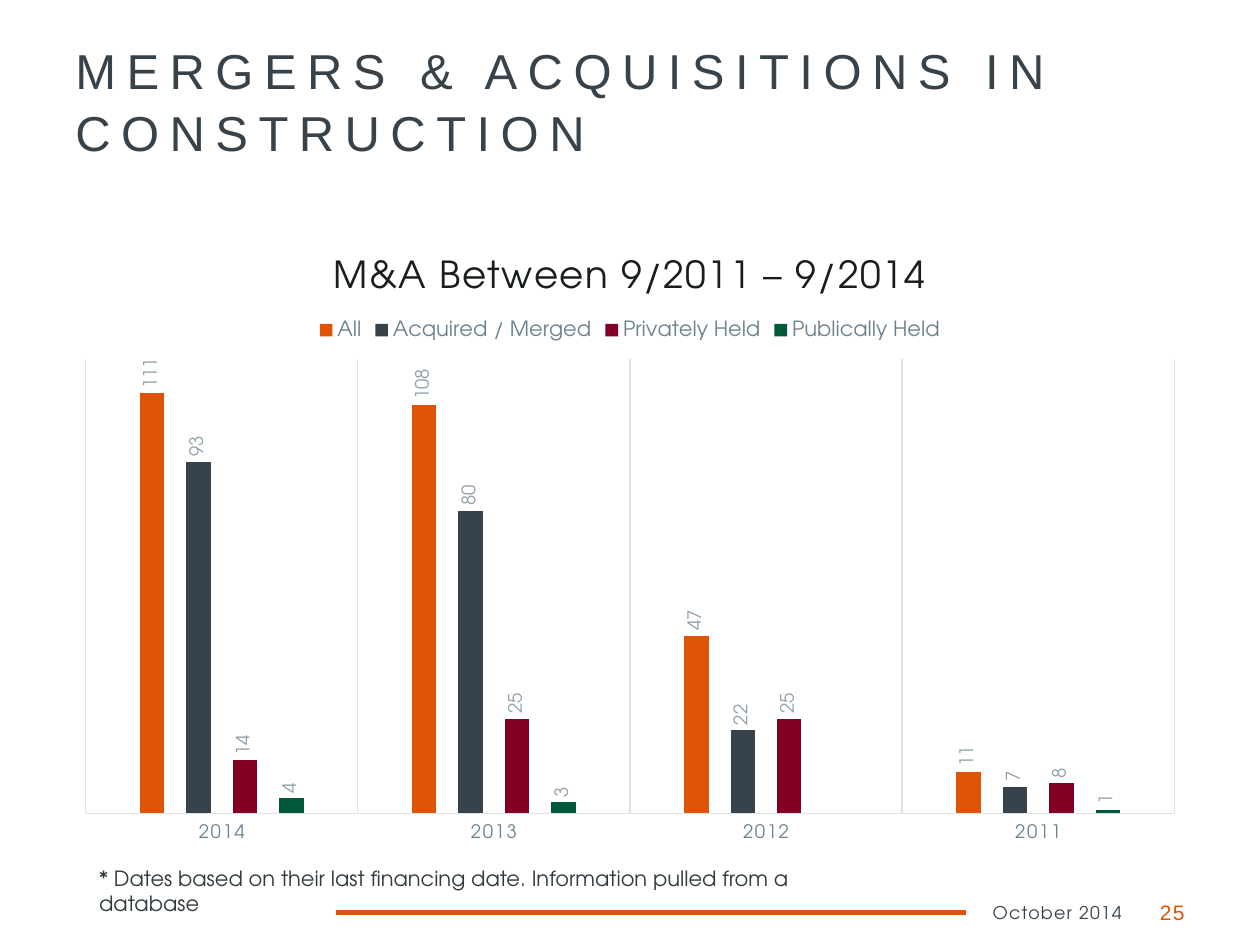
from dataclasses import dataclass
from typing import Optional

from lxml.etree import SubElement
from pptx import Presentation
from pptx.chart.data import CategoryChartData
from pptx.dml.color import RGBColor
from pptx.enum.chart import (XL_CHART_TYPE, XL_LABEL_POSITION, XL_LEGEND_POSITION,
                             XL_TICK_LABEL_POSITION, XL_TICK_MARK)
from pptx.enum.shapes import MSO_CONNECTOR
from pptx.enum.text import MSO_ANCHOR, PP_ALIGN
from pptx.oxml import parse_xml
from pptx.oxml.ns import nsdecls, qn
from pptx.util import Cm, Pt

ORANGE = RGBColor(0xE0, 0x52, 0x06)
SLATE = RGBColor(0x37, 0x42, 0x4A)
MAROON = RGBColor(0x82, 0x00, 0x24)
GREEN = RGBColor(0x00, 0x58, 0x3D)
INK = RGBColor(0x30, 0x3A, 0x3F)
TITLE_INK = RGBColor(0x18, 0x1D, 0x1F)
AXIS_GRAY = RGBColor(0x6C, 0x83, 0x8E)
LABEL_GRAY = RGBColor(0x8E, 0xA0, 0xA9)
RULE_GRAY = RGBColor(0xDD, 0xE2, 0xE5)

HEAD_FONT = "Arial"
BODY_FONT = "TeX Gyre Adventor"


@dataclass
class Label:
    text: str
    left: float
    top: float
    width: float
    height: float
    size: float
    color: RGBColor
    font: str = BODY_FONT
    tracking: float = 0
    align: PP_ALIGN = PP_ALIGN.LEFT
    anchor: MSO_ANCHOR = MSO_ANCHOR.TOP
    wrap: bool = True
    line_spacing: Optional[float] = None


@dataclass
class Series:
    name: str
    values: tuple
    color: RGBColor


LABELS = [
    Label("MERGERS & ACQUISITIONS IN CONSTRUCTION", 1.27, 0.64, 22.86, 3.38, 28, SLATE,
          HEAD_FONT, tracking=6, line_spacing=1.05),
    Label("* Dates based on their last financing date. Information pulled from a database",
          1.75, 17.32, 16.41, 0.76, 12, INK, wrap=False),
    Label("October 2014", 16.94, 17.88, 5.92, 1.02, 10, SLATE, tracking=0.7,
          align=PP_ALIGN.RIGHT, anchor=MSO_ANCHOR.MIDDLE),
    Label("25", 22.86, 17.88, 1.27, 1.02, 12, ORANGE, HEAD_FONT, tracking=0.7,
          align=PP_ALIGN.RIGHT, anchor=MSO_ANCHOR.MIDDLE),
]

YEARS = ["2014", "2013", "2012", "2011"]
DEALS = [
    Series("All", (111, 108, 47, 11), ORANGE),
    Series("Acquired / Merged", (93, 80, 22, 7), SLATE),
    Series("Privately Held", (14, 25, 25, 8), MAROON),
    Series("Publically Held", (4, 3, None, 1), GREEN),
]


def set_font(font, size: float, color: RGBColor, name: str = BODY_FONT) -> None:
    font.size, font.name, font.bold = Pt(size), name, False
    font.color.rgb = color


def track(root, tag: str, points: float) -> None:
    """Set letter spacing on every run property element of one kind."""
    for props in root.iter(qn(tag)):
        props.set("spc", str(round(points * 100)))


def add_label(slide, label: Label) -> None:
    sp = slide.shapes.add_textbox(Cm(label.left), Cm(label.top),
                                  Cm(label.width), Cm(label.height))
    tf = sp.text_frame
    tf.word_wrap, tf.vertical_anchor = label.wrap, label.anchor
    p = tf.paragraphs[0]
    p.text, p.alignment = label.text, label.align
    if label.line_spacing:
        p.line_spacing = label.line_spacing
    set_font(p.font, label.size, label.color, label.font)
    if label.tracking:
        p.runs[0].font.size = Pt(label.size)
        track(p._p, "a:rPr", label.tracking)


def add_rule(slide, left: float, right: float, y: float) -> None:
    line = slide.shapes.add_connector(MSO_CONNECTOR.STRAIGHT, Cm(left), Cm(y), Cm(right), Cm(y))
    line.line.color.rgb, line.line.width = ORANGE, Pt(3)
    SubElement(line._element.spPr, qn("a:effectLst"))


def style_axes(chart) -> None:
    axis = chart.category_axis
    axis.major_tick_mark = axis.minor_tick_mark = XL_TICK_MARK.NONE
    axis.tick_label_position = XL_TICK_LABEL_POSITION.LOW
    axis.has_major_gridlines = True
    for line in (axis.format.line, axis.major_gridlines.format.line):
        line.color.rgb, line.width = RULE_GRAY, Pt(0.75)
    set_font(axis.tick_labels.font, 10.6, AXIS_GRAY)
    track(axis._element, "a:defRPr", 1)

    values = chart.value_axis
    values.minimum_scale, values.maximum_scale = 0, 120
    values.has_major_gridlines = False
    values.visible = False


def style_series(series, color: RGBColor) -> None:
    series.format.fill.solid()
    series.format.fill.fore_color.rgb = color
    series.invert_if_negative = False
    labels = series.data_labels
    labels.show_value = True
    labels.position = XL_LABEL_POSITION.OUTSIDE_END
    set_font(labels.font, 10.6, LABEL_GRAY)
    body = labels._element.find(f"{qn('c:txPr')}/{qn('a:bodyPr')}")
    body.set("rot", "-5400000")
    body.set("vert", "horz")


def place_plot(chart, x: float, y: float, w: float, h: float) -> None:
    """Fix the inner plot area, in fractions of the chart."""
    area = chart._chartSpace.chart.plotArea
    for old in area.findall(qn("c:layout")):
        area.remove(old)
    area.insert(0, parse_xml(
        f'<c:layout {nsdecls("c")}><c:manualLayout><c:layoutTarget val="inner"/>'
        '<c:xMode val="edge"/><c:yMode val="edge"/>'
        f'<c:x val="{x}"/><c:y val="{y}"/><c:w val="{w}"/><c:h val="{h}"/>'
        '</c:manualLayout></c:layout>'))


def add_deal_chart(slide) -> None:
    data = CategoryChartData()
    data.categories = YEARS
    for deal in DEALS:
        data.add_series(deal.name, deal.values)
    chart = slide.shapes.add_chart(XL_CHART_TYPE.COLUMN_CLUSTERED, Cm(1.27), Cm(4.65),
                                   Cm(22.86), Cm(12.37), data).chart
    set_font(chart.font, 10, INK)

    # Title and legend
    tf = chart.chart_title.text_frame
    p = tf.paragraphs[0]
    p.text = "M&A Between 9/2011 – 9/2014"
    set_font(p.font, 21.3, TITLE_INK)
    set_font(p.runs[0].font, 21.3, TITLE_INK)
    track(p._p, "a:rPr", 1)
    chart.has_legend = True
    chart.legend.position = XL_LEGEND_POSITION.TOP
    chart.legend.include_in_layout = False
    set_font(chart.legend.font, 12, AXIS_GRAY)

    # Columns and axes
    plot = chart.plots[0]
    plot.gap_width, plot.overlap, plot.vary_by_categories = 444, -90, False
    for series, deal in zip(plot.series, DEALS):
        style_series(series, deal.color)
    style_axes(chart)
    place_plot(chart, 0.02, 0.21, 0.96, 0.74)


def main() -> None:
    prs = Presentation()
    prs.slide_width, prs.slide_height = Cm(25.4), Cm(19.05)
    slide = prs.slides.add_slide(prs.slide_layouts[6])
    add_rule(slide, 6.78, 19.48, 18.39)
    add_deal_chart(slide)
    for label in LABELS:
        add_label(slide, label)
    prs.save("out.pptx")


if __name__ == "__main__":
    main()
